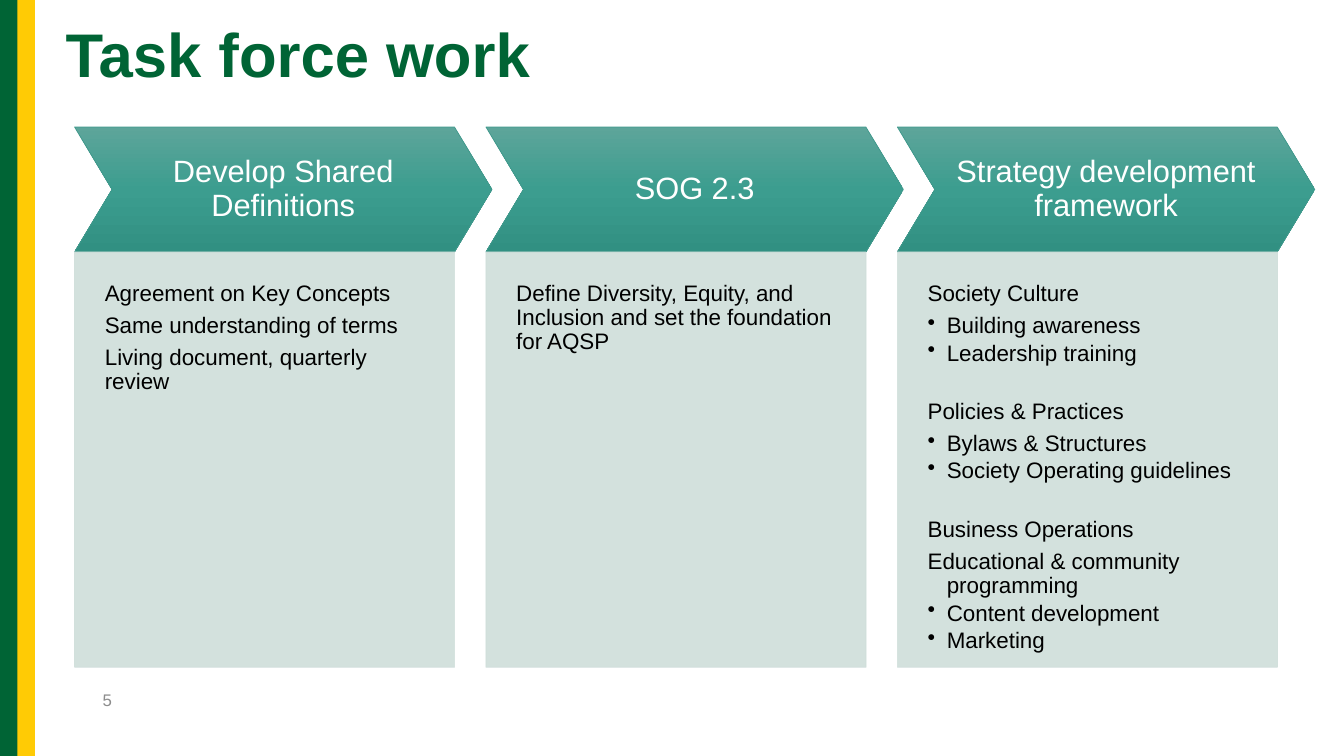
from lxml.etree import SubElement
from pptx import Presentation
from pptx.dml.color import RGBColor
from pptx.enum.shapes import MSO_SHAPE as Preset
from pptx.enum.text import MSO_ANCHOR as Anchor, MSO_AUTO_SIZE as AutoSize, PP_ALIGN as Align
from pptx.oxml.ns import qn
from pptx.util import Inches, Pt

GREEN = RGBColor(0x00, 0x64, 0x35)
YELLOW = RGBColor(0xFF, 0xCB, 0x05)
TEAL_LIGHT = RGBColor(0x5D, 0xA5, 0x9A)
TEAL = RGBColor(0x3C, 0x9D, 0x8F)
TEAL_DARK = RGBColor(0x31, 0x90, 0x82)
TEAL_LINE = RGBColor(0x40, 0x99, 0x8C)
CARD = RGBColor(0xCF, 0xDE, 0xDA)
WHITE = RGBColor(0xFF, 0xFF, 0xFF)
BLACK = RGBColor(0x00, 0x00, 0x00)
GREY = RGBColor(0x8C, 0x8C, 0x8C)

FIRST_COLUMN, COLUMN_STEP = 5.55, 30.61

STAGES = [
    ("Develop Shared Definitions", [
        ("Agreement on Key Concepts", "head"),
        ("Same understanding of terms", "head"),
        ("Living document, quarterly review", "head"),
    ]),
    ("SOG 2.3", [
        ("Define Diversity, Equity, and Inclusion and set the foundation for AQSP", "head"),
    ]),
    ("Strategy development framework", [
        ("Society Culture", "head"),
        ("Building awareness", "bullet"),
        ("Leadership training", "bullet"),
        ("Policies & Practices", "section"),
        ("Bylaws & Structures", "bullet"),
        ("Society Operating guidelines", "bullet"),
        ("Business Operations", "section"),
        ("Educational & community programming", "hanging"),
        ("Content development", "bullet"),
        ("Marketing", "bullet"),
    ]),
]

PARAGRAPH_STYLES = {
    "head": {"after": 5.6},
    "section": {"before": 22, "after": 5.6},
    "hanging": {"after": 2.4, "indent": 0.19},
    "bullet": {"after": 2.4, "indent": 0.19, "bullet": "•"},
}


def write(paragraph, text, size, color, bold=False, align=Align.LEFT,
          before=0, after=0, indent=0, bullet=None):
    """Fill one paragraph with formatted text."""
    properties = paragraph._p.get_or_add_pPr()
    if indent:
        properties.set("marL", str(Inches(indent)))
        properties.set("indent", str(-Inches(indent)))
    if bullet:
        SubElement(properties, qn("a:buChar"), char=bullet)
    paragraph.alignment = align
    paragraph.line_spacing = 0.9
    paragraph.space_before, paragraph.space_after = Pt(before), Pt(after)
    run = paragraph.add_run()
    run.text = text
    run.font.name, run.font.size, run.font.bold = "Arial", Pt(size), bold
    run.font.color.rgb = color


class Deck:
    """Hold the presentation, its style and the current slide."""

    def __init__(self):
        """Open a widescreen slide with a title placeholder."""
        self.presentation = Presentation()
        self.presentation.slide_width = Inches(13.33)
        self.presentation.slide_height = Inches(7.5)
        self.slide = self.presentation.slides.add_slide(self.presentation.slide_layouts[5])

    def box(self, left, top, width, height):
        """Turn percentages of the slide into lengths."""
        across = self.presentation.slide_width / 100
        down = self.presentation.slide_height / 100
        return [int(length) for length in
                (left * across, top * down, width * across, height * down)]

    def frame(self, shape, anchor, inset=None):
        """Prepare the text frame of a shape."""
        frame = shape.text_frame
        frame.word_wrap, frame.auto_size = True, AutoSize.NONE
        frame.vertical_anchor = anchor
        if inset is not None:
            frame.margin_left = frame.margin_right = frame.margin_top = Inches(inset)
            frame.margin_bottom = Inches(0.15)
        return frame

    def shape(self, preset, area, color):
        """Add a plain filled shape."""
        shape = self.slide.shapes.add_shape(preset, *self.box(*area))
        shape.shadow.inherit = False
        shape.fill.solid()
        shape.fill.fore_color.rgb = color
        shape.line.fill.background()
        return shape

    def title(self, text, area):
        """Place and fill the title placeholder."""
        title = self.slide.shapes.title
        title.left, title.top, title.width, title.height = self.box(*area)
        frame = self.frame(title, Anchor.MIDDLE)
        write(frame.paragraphs[0], text, size=44, color=GREEN, bold=True)

    def number(self, text, area):
        """Add the slide number."""
        label = self.slide.shapes.add_textbox(*self.box(*area))
        frame = self.frame(label, Anchor.MIDDLE)
        write(frame.paragraphs[0], text, size=12, color=GREY)

    def chevron(self, text, area):
        """Add a gradient chevron with a heading."""
        chevron = self.shape(Preset.CHEVRON, area, TEAL)
        chevron.adjustments[0] = 0.3
        chevron.fill.gradient()
        chevron.fill.gradient_angle = 270
        stops = chevron._element.spPr.find(".//" + qn("a:gsLst"))
        stops.clear()
        for percent, color in ((0, TEAL_LIGHT), (50, TEAL), (100, TEAL_DARK)):
            stop = SubElement(stops, qn("a:gs"), pos=str(percent * 1000))
            SubElement(stop, qn("a:srgbClr"), val=str(color))
        chevron.line.color.rgb, chevron.line.width = TEAL_LINE, Pt(0.5)
        frame = self.frame(chevron, Anchor.MIDDLE, inset=0.15)
        write(frame.paragraphs[0], text, size=22, color=WHITE, align=Align.CENTER)

    def card(self, items, area):
        """Add a translucent card with its list."""
        card = self.shape(Preset.RECTANGLE, area, CARD)
        card.line.color.rgb, card.line.width = CARD, Pt(0.5)
        for color in card._element.spPr.iter(qn("a:srgbClr")):
            SubElement(color, qn("a:alpha"), val="90000")
        frame = self.frame(card, Anchor.TOP, inset=0.3)
        for index, (text, style) in enumerate(items):
            paragraph = frame.add_paragraph() if index else frame.paragraphs[0]
            write(paragraph, text, size=16, color=BLACK, **PARAGRAPH_STYLES[style])


def main():
    """Build and save the slide."""
    deck = Deck()
    deck.shape(Preset.RECTANGLE, (0, 0, 1.58, 100), GREEN)
    deck.shape(Preset.RECTANGLE, (1.3, 0, 1.3, 100), YELLOW)
    deck.title("Task force work", (4.13, -2, 86.27, 19.33))
    deck.number("5", (6.9, 90.13, 22.5, 5.33))
    for column, (heading, items) in enumerate(STAGES):
        left = FIRST_COLUMN + column * COLUMN_STEP
        deck.chevron(heading, (left, 16.8, 31.06, 16.53))
        deck.card(items, (left, 33.33, 28.28, 54.93))
    deck.presentation.save("out.pptx")


if __name__ == "__main__":
    main()
